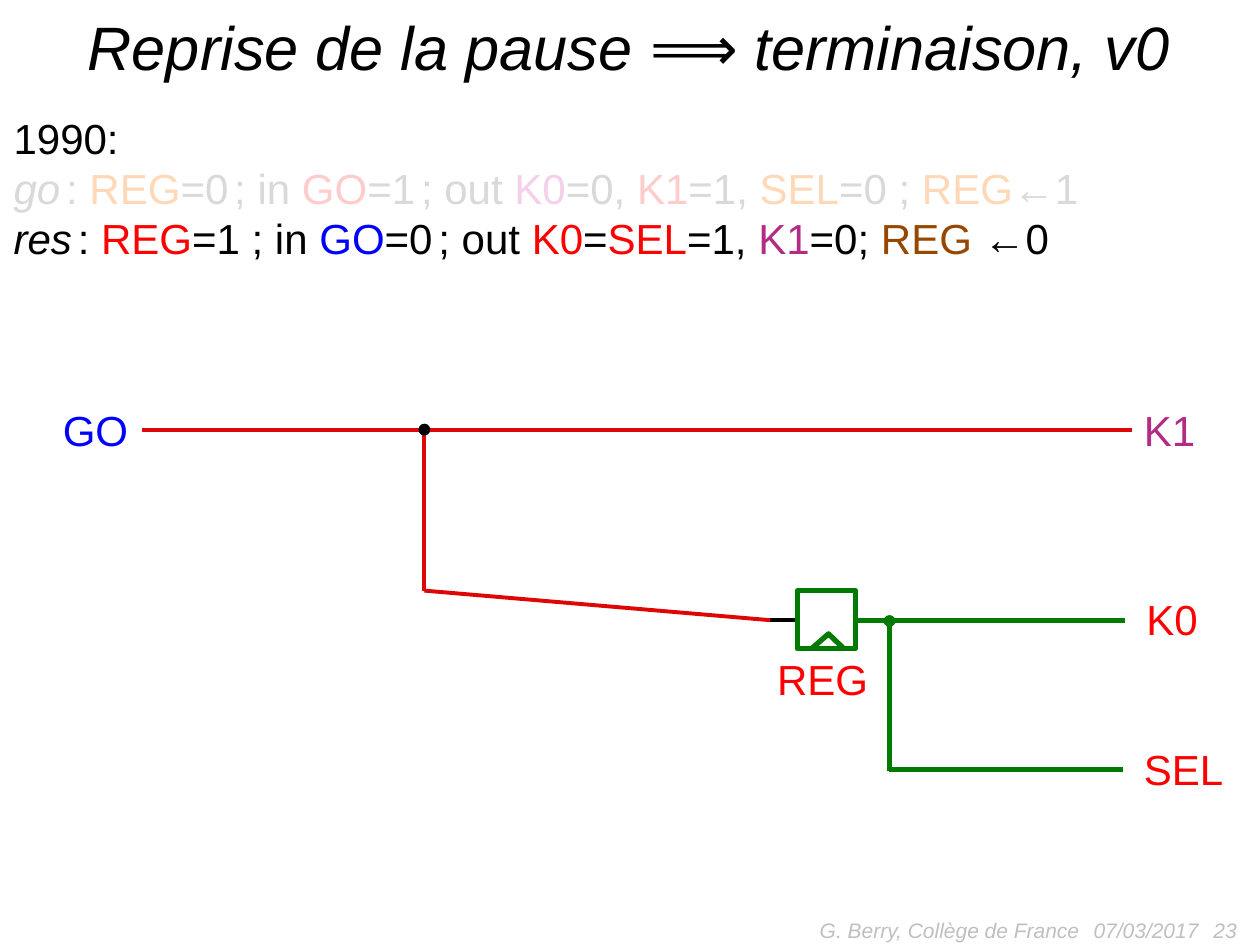
"""Build the slide on resuming a pause, with its register circuit."""
from lxml import etree
from pptx import Presentation
from pptx import util as u
from pptx.dml.color import RGBColor
from pptx.enum import shapes, text
from pptx.oxml import ns

BLACK = RGBColor(0, 0, 0)
RED = RGBColor(255, 0, 0)
BLUE = RGBColor(0, 0, 255)
PLUM = RGBColor(0xB2, 0x2C, 0x85)
BROWN = RGBColor(0x96, 0x47, 0)
WIRE = RGBColor(0xDD, 0x08, 0x06)
GREEN = RGBColor(0, 0x7A, 0)
PALE = RGBColor(0xD9, 0xD9, 0xD9)
PEACH = RGBColor(0xFF, 0xD9, 0xB7)
ROSE = RGBColor(0xFF, 0xCC, 0xCC)
LILAC = RGBColor(0xF4, 0xD1, 0xE8)
GREY = RGBColor(0xBF, 0xBF, 0xBF)

LEFT, RIGHT, MID = text.PP_ALIGN.LEFT, text.PP_ALIGN.RIGHT, text.PP_ALIGN.CENTER

TITLE = "Reprise de la pause ⟹ terminaison, v0"
RULES = [
    [("1990:", BLACK)],
    [("go", PALE, 24, True), (" ", PALE, 12), (": ", PALE), ("REG", PEACH),
     ("=0", PALE), (" ", PALE, 12), ("; in ", PALE), ("GO", ROSE),
     ("=1", PALE), (" ", PALE, 12), ("; out ", PALE), ("K0", LILAC),
     ("=0, ", PALE), ("K1", ROSE), ("=1, ", PALE), ("SEL", PEACH),
     ("=0 ; ", PALE), ("REG", PEACH), ("←1", PALE)],
    [("res", BLACK, 24, True), (" ", BLACK, 12), (": ", BLACK), ("REG", RED),
     ("=1 ; in ", BLACK), ("GO", BLUE), ("=0", BLACK), (" ", BLACK, 12),
     ("; out ", BLACK), ("K0", RED), ("=", BLACK), ("SEL", RED),
     ("=1, ", BLACK), ("K1", PLUM), ("=0; ", BLACK), ("REG", BROWN),
     (" ←0", BLACK)],
]
FOOT = [
    ("07/03/2017", 617.8, 168, LEFT),
    ("23", 545.8, 168, RIGHT),
    ("G. Berry, Collège de France", 396, 228, RIGHT),
]
LABELS = [
    ("GO", BLUE, 28.8, 227.5, 52),
    ("K1", PLUM, 646.6, 227.5, 44),
    ("K0", RED, 648, 335.5, 44),
    ("SEL", RED, 646.6, 421.2, 60.5),
    ("REG", RED, 437, 369.8, 67),
]
TOP, MAIN, LOW = 245.5, 354.4, 439.9
FORK, TAP = 242.5, 508.3
WIRES = [
    (438.5, MAIN, 454.5, MAIN, BLACK, 2.25),
    (FORK, 337.5, 440, MAIN, WIRE, 2.25),
    (FORK, TOP, FORK, 337.5, WIRE, 2.25),
    (81.4, TOP, 646.6, TOP, WIRE, 2.25),
    (TAP, LOW, 641.5, LOW, GREEN, 3),
    (TAP, MAIN, TAP, 440.6, GREEN, 3),
    (489.6, MAIN, 643, MAIN, GREEN, 3),
]
DOTS = [(FORK, TOP, BLACK), (TAP, MAIN + 0.5, GREEN)]
CELL = (455.6, 337.6, 33.2)
CLOCK = [(464.4, 370.1), (473.5, 362.2), (481.7, 370.1)]


def pts(*nums):
    return [u.Pt(n) for n in nums]


def add_run(para, words, color, size=24, slant=False):
    run = para.add_run()
    run.text = words
    font = run.font
    font.name, font.size, font.italic = "Arial", u.Pt(size), slant
    font.color.rgb = color


def add_box(slide, left, top, wide, high, wrap=False):
    frame = slide.shapes.add_textbox(*pts(left, top, wide, high)).text_frame
    frame.word_wrap = wrap
    return frame


def add_wire(slide, x1, y1, x2, y2, color, width):
    wire = slide.shapes.add_connector(
        shapes.MSO_CONNECTOR.STRAIGHT, *pts(x1, y1, x2, y2))
    wire.line.color.rgb, wire.line.width = color, u.Pt(width)
    etree.SubElement(wire.element.spPr, ns.qn("a:effectLst"))


def outline(shape):
    shape.shadow.inherit = False
    shape.fill.background()
    shape.line.color.rgb, shape.line.width = GREEN, u.Pt(3)


def add_dot(slide, x, y, color):
    dot = slide.shapes.add_shape(
        shapes.MSO_SHAPE.OVAL, *pts(x - 3, y - 3, 6, 6))
    dot.shadow.inherit = False
    dot.fill.solid()
    dot.fill.fore_color.rgb = dot.line.color.rgb = color
    dot.line.width = u.Pt(0.75)


def add_cell(slide):
    left, top, side = CELL
    outline(slide.shapes.add_shape(
        shapes.MSO_SHAPE.RECTANGLE, *pts(left, top, side, side)))
    pen = slide.shapes.build_freeform(*pts(*CLOCK[0]), scale=1.0)
    pen.add_line_segments([pts(*spot) for spot in CLOCK[1:]], close=False)
    outline(pen.convert_to_shape())


def add_title(slide):
    head = slide.shapes.title
    head.left, head.top, head.width, head.height = pts(8.6, 1.4, 702, 49.7)
    frame = head.text_frame
    frame.auto_size = text.MSO_AUTO_SIZE.NONE
    frame.vertical_anchor = text.MSO_ANCHOR.MIDDLE
    para = frame.paragraphs[0]
    para.alignment = MID
    add_run(para, TITLE, BLACK, 35, True)


def main():
    deck = Presentation()
    deck.slide_width, deck.slide_height = pts(720, 540)
    slide = deck.slides.add_slide(deck.slide_layouts[5])
    add_title(slide)

    frame = add_box(slide, 0.7, 60.5, 628.5, 94.3)
    for row, runs in enumerate(RULES):
        para = frame.add_paragraph() if row else frame.paragraphs[0]
        for run in runs:
            add_run(para, *run)

    for words, left, wide, align in FOOT:
        frame = add_box(slide, left, 517, wide, 28.8, True)
        frame.vertical_anchor = text.MSO_ANCHOR.MIDDLE
        frame.paragraphs[0].alignment = align
        add_run(frame.paragraphs[0], words, GREY, 12, True)

    for words, color, left, top, wide in LABELS:
        add_run(add_box(slide, left, top, wide, 36).paragraphs[0], words, color)

    add_cell(slide)
    for wire in WIRES:
        add_wire(slide, *wire)
    for dot in DOTS:
        add_dot(slide, *dot)
    deck.save("out.pptx")


if __name__ == "__main__":
    main()
